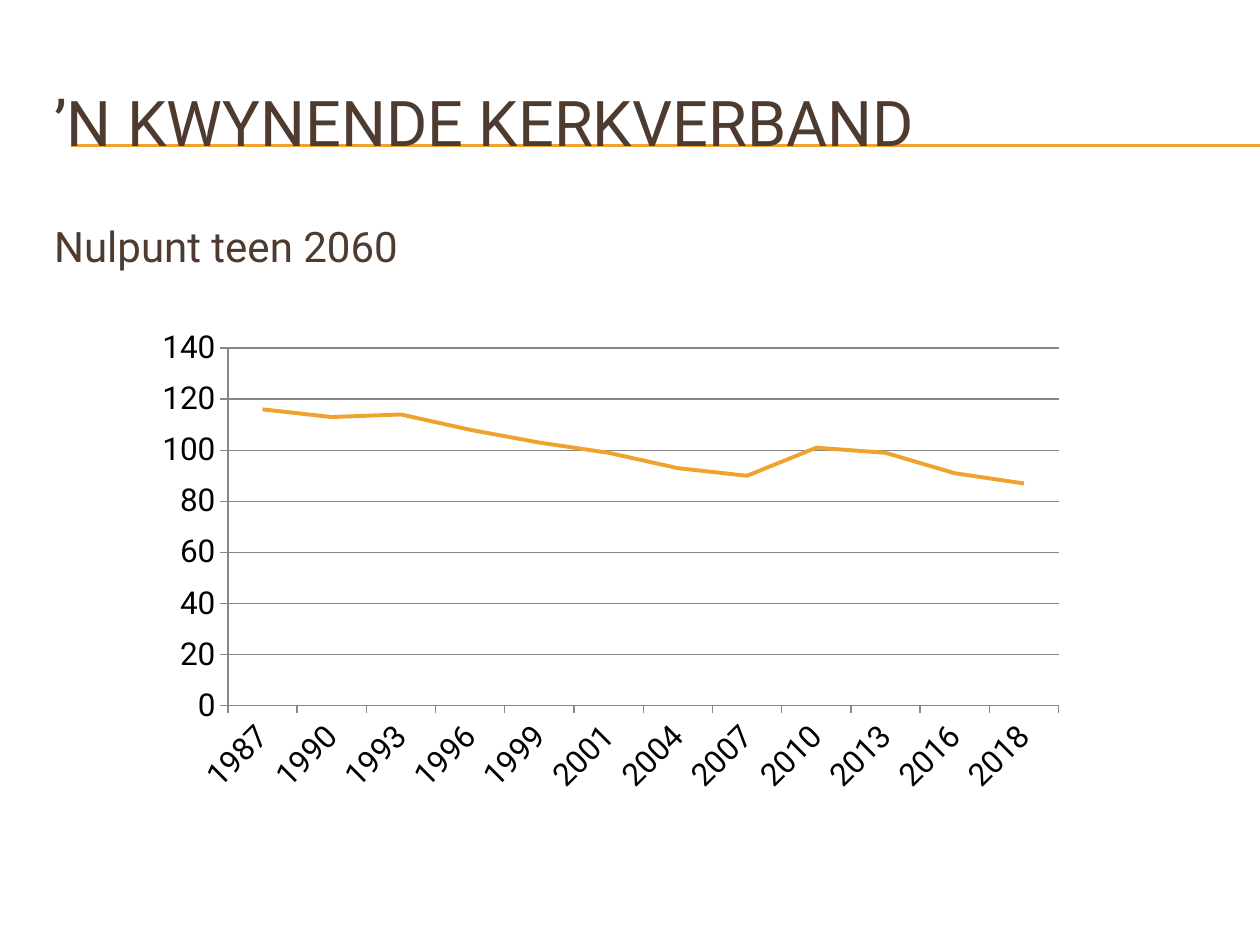
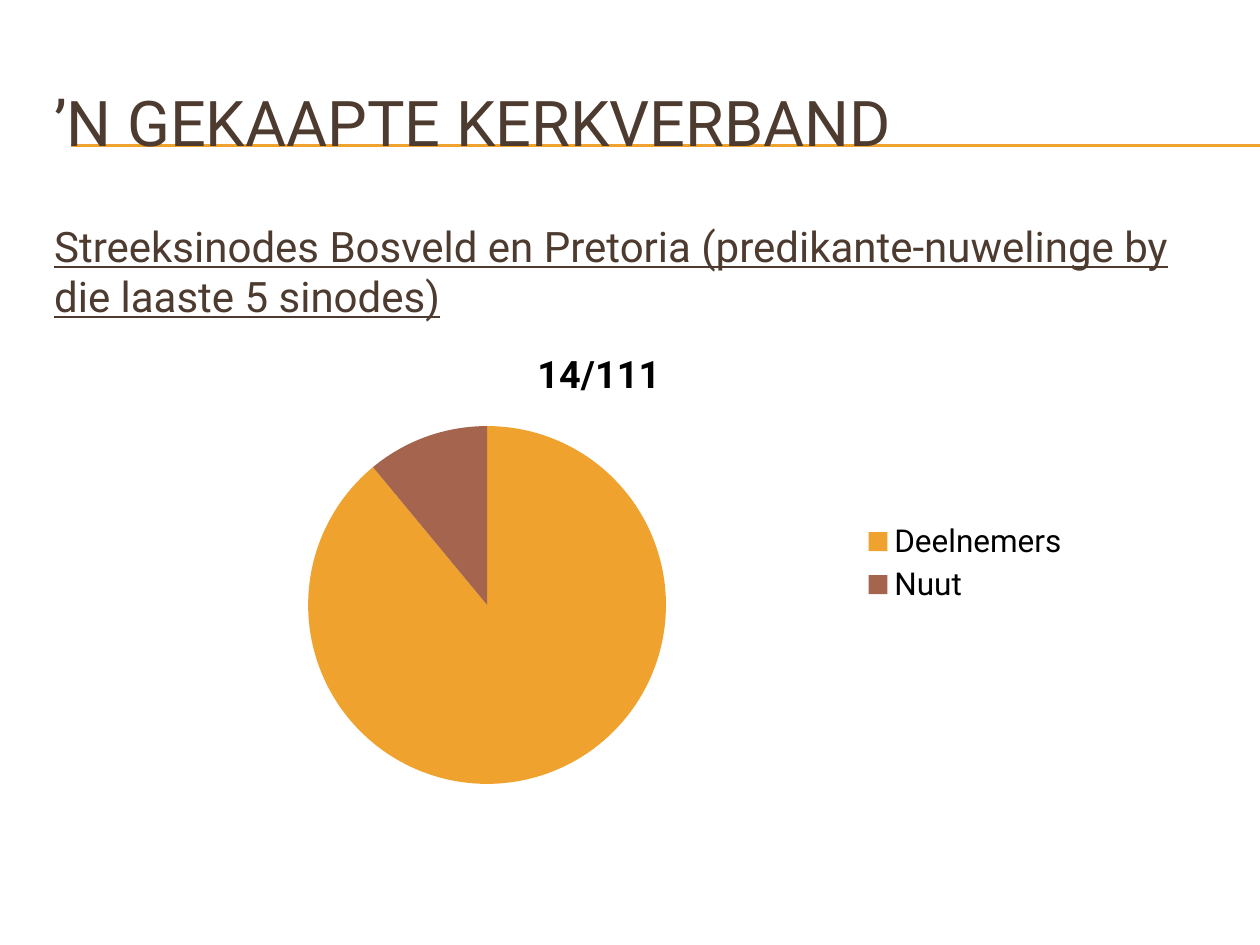
from lxml import etree
from pptx import Presentation
from pptx import util as u
from pptx.chart import data as cd
from pptx.dml.color import RGBColor
from pptx.enum import chart as ch, shapes, text
from pptx.oxml import ns

FONT = "Roboto"
COLORS = {"text": "4E3B30", "accent": "F0A22E", "second": "A5644E",
          "grid": "878787", "chart": "000000"}
TITLE_BOX = (0.33, 0.5, 9.5, 0.92)
BODY_BOX = (0.33, 1.7, 9.5, 4.95)
RULE_LEFT, RULE_RIGHT, RULE_HEIGHTS = 0.56, 10, (1.15, 1.16)


def rgb(name):
    return RGBColor.from_string(COLORS[name])


def inches(box):
    return [u.Inches(v) for v in box]


def style(font, size, color, bold=None):
    font.name, font.size, font.bold = FONT, u.Pt(size), bold
    font.color.rgb = rgb(color)


def paint_line(line, color, width):
    line.color.rgb = rgb(color)
    line.width = u.Pt(width)


def add_rule(s, y):
    """Thin line across the slide, behind the title."""
    rule = s.shapes.add_connector(shapes.MSO_CONNECTOR.STRAIGHT,
                                  *inches((RULE_LEFT, y, RULE_RIGHT, y)))
    paint_line(rule.line, "accent", 0.75)
    etree.SubElement(rule._element.spPr, ns.qn("a:effectLst"))
    s.shapes._spTree.insert(2, rule._element)


def fill_placeholder(sp, box, words, size, anchor):
    sp.left, sp.top, sp.width, sp.height = inches(box)
    tf = sp.text_frame
    tf.text = words
    tf.vertical_anchor = anchor
    p = tf.paragraphs[0]
    p.alignment = text.PP_ALIGN.LEFT
    style(p.runs[0].font, size, "text")
    return p


def add_slide(prs, title, body, underline=None):
    s = prs.slides.add_slide(prs.slide_layouts[1])
    for y in RULE_HEIGHTS:
        add_rule(s, y)
    fill_placeholder(s.shapes.title, TITLE_BOX, title, 36, text.MSO_ANCHOR.MIDDLE)
    p = fill_placeholder(s.placeholders[1], BODY_BOX, body, 24, text.MSO_ANCHOR.TOP)
    p.runs[0].font.underline = underline
    # Plain paragraph without bullet or indent
    pPr = p._p.get_or_add_pPr()
    pPr.set("marL", "0")
    pPr.set("indent", "0")
    etree.SubElement(pPr, ns.qn("a:buNone"))
    return s


def add_chart(s, kind, box, name, values):
    chart_data = cd.CategoryChartData()
    chart_data.categories = list(values)
    chart_data.add_series(name, list(values.values()))
    chart = s.shapes.add_chart(kind, *inches(box), chart_data).chart
    style(chart.font, 18, "chart")
    chart.has_legend = chart.has_title = False
    return chart


def add_line_chart(s, box, name, values):
    chart = add_chart(s, ch.XL_CHART_TYPE.LINE, box, name, values)
    plot = chart.plots[0]
    plot.vary_by_categories = False
    plot.series[0].smooth = False
    paint_line(plot.series[0].format.line, "accent", 2.25)
    for axis in (chart.category_axis, chart.value_axis):
        axis.major_tick_mark = ch.XL_TICK_MARK.OUTSIDE
        paint_line(axis.format.line, "grid", 0.75)
        style(axis.tick_labels.font, 18, "chart")
    # Slanted years
    labels = chart.category_axis._element.find(ns.qn("c:txPr"))
    labels.find(ns.qn("a:bodyPr")).set("rot", "-2700000")
    scale = chart.value_axis
    scale.minimum_scale, scale.maximum_scale, scale.major_unit = 0, 140, 20
    paint_line(scale.major_gridlines.format.line, "grid", 0.75)


def add_pie_chart(s, box, name, values, colors):
    chart = add_chart(s, ch.XL_CHART_TYPE.PIE, box, name, values)
    chart.has_title = True
    tf = chart.chart_title.text_frame
    tf.text = name
    style(tf.paragraphs[0].runs[0].font, 21.6, "chart", bold=True)
    chart.has_legend = True
    chart.legend.position = ch.XL_LEGEND_POSITION.RIGHT
    chart.legend.include_in_layout = False
    style(chart.legend.font, 18, "chart")
    for i, color in enumerate(colors):
        fill = chart.plots[0].series[0].points[i].format.fill
        fill.solid()
        fill.fore_color.rgb = rgb(color)


def main():
    prs = Presentation()
    prs.slide_width, prs.slide_height = u.Inches(10), u.Inches(7.5)

    # Decline over the years
    s = add_slide(prs, "’N KWYNENDE KERKVERBAND", "Nulpunt teen 2060")
    add_line_chart(s, (1.14, 2.54, 7.41, 3.84), "Series 1", {
        "1987": 116, "1990": 113, "1993": 114, "1996": 108,
        "1999": 103, "2001": 99, "2004": 93, "2007": 90,
        "2010": 101, "2013": 99, "2016": 91, "2018": 87})

    # Share of newcomers
    s = add_slide(prs, "’N GEKAAPTE KERKVERBAND",
                  "Streeksinodes Bosveld en Pretoria (predikante-nuwelinge by "
                  "die laaste 5 sinodes)", underline=True)
    add_pie_chart(s, (0.92, 2.58, 7.67, 3.78), "14/111",
                  {"Deelnemers": 89, "Nuut": 11}, ("accent", "second"))

    prs.save("out.pptx")


if __name__ == "__main__":
    main()
